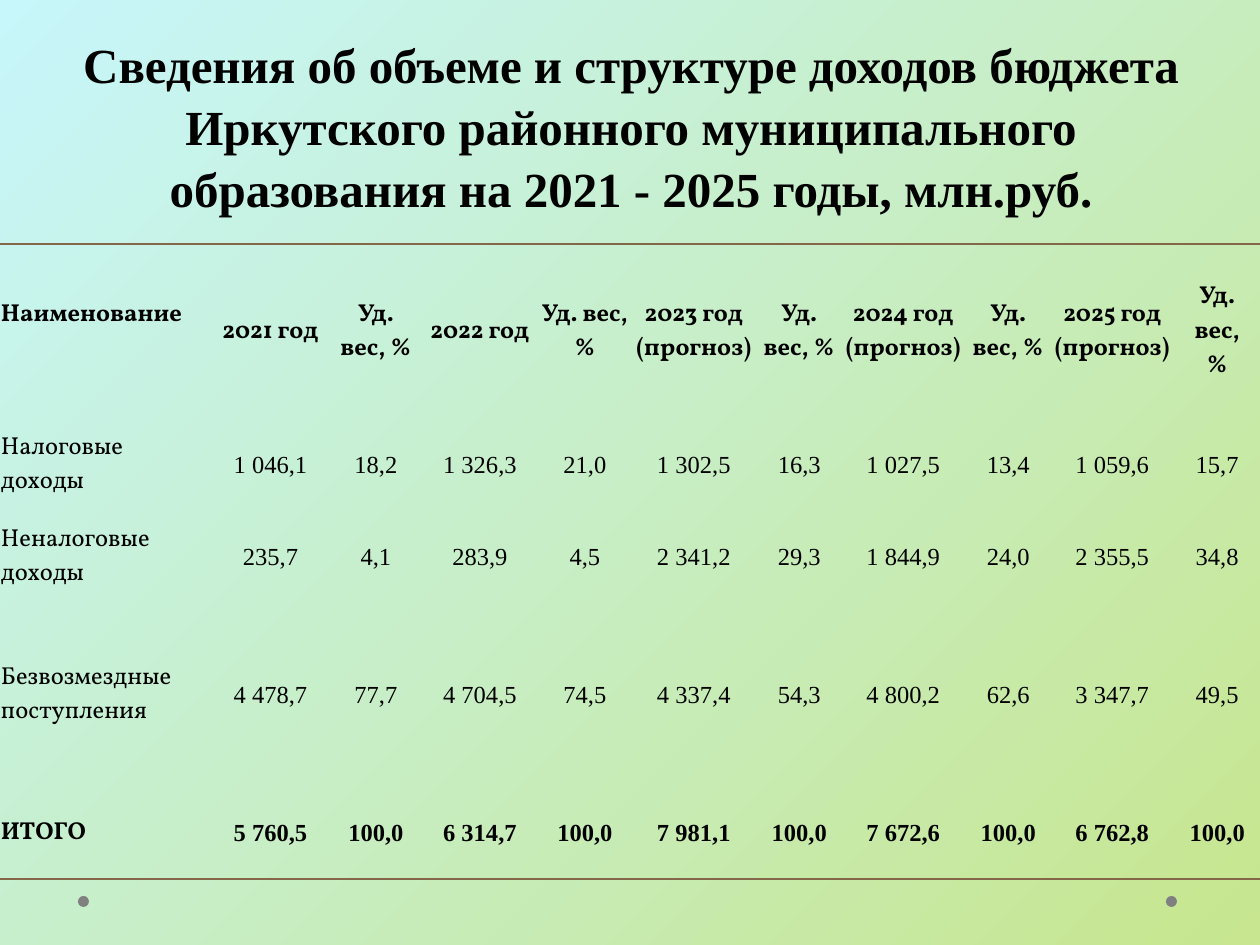
from lxml.etree import SubElement
from pptx import Presentation
from pptx.dml.color import RGBColor
from pptx.enum.shapes import MSO_SHAPE as Shape
from pptx.enum.text import MSO_ANCHOR as Anchor, PP_ALIGN as Align
from pptx.oxml import parse_xml
from pptx.oxml.ns import nsdecls, qn
from pptx.util import Pt

SCALE = 914400 / 126  # EMU in one px

THEME = {
    "sky": RGBColor.from_string("C7F6FB"),
    "lime": RGBColor.from_string("C7E68F"),
    "dot": RGBColor.from_string("808080"),
    "ink": RGBColor.from_string("000000"),
    "rule": "846648",
    "serif": "Times New Roman",
    "label": "Vollkorn",
    "title_size": Pt(28),
    "table_size": Pt(14),
}


def px(length):
    return round(length * SCALE)


def style_text(frame, align, name, size, bold):
    for para in frame.paragraphs:
        para.alignment = align
        for span in para.runs:
            span.font.color.rgb = THEME["ink"]
            for key, value in {"name": name, "size": size, "bold": bold}.items():
                setattr(span.font, key, value)


deck = Presentation()
deck.slide_width, deck.slide_height = px(1260), px(945)
page = deck.slides.add_slide(deck.slide_layouts[6])

# Background: diagonal gradient
backdrop = page.background.fill
backdrop.gradient()
backdrop.gradient_angle = 315
for stop, position, color in zip(backdrop.gradient_stops, (0, 1), ("sky", "lime")):
    stop.position = position
    stop.color.rgb = THEME[color]

# Footer dots
for left in (1166, 78):
    dot = page.shapes.add_shape(Shape.OVAL, px(left), px(896), px(11), px(11))
    dot.shadow.inherit = False
    dot.fill.solid()
    dot.fill.fore_color.rgb = THEME["dot"]
    dot.line.fill.background()

# Title
box = page.shapes.add_textbox(px(64), 0, px(1134), px(220))
title = box.text_frame
title.text = ("Сведения об объеме и структуре доходов бюджета Иркутского районного "
              "муниципального образования на 2021 - 2025 годы, млн.руб.")
title_format = {"word_wrap": True, "vertical_anchor": Anchor.BOTTOM,
                "margin_left": px(12), "margin_right": px(12), "margin_bottom": px(3)}
for key, value in title_format.items():
    setattr(title, key, value)
style_text(title, Align.CENTER, THEME["serif"], THEME["title_size"], True)
title.paragraphs[0].line_spacing = 1.05

# Income table
SHARE = "Уд. вес, %"
ROWS = [
    ["Наименование", "2021 год", SHARE, "2022 год", SHARE, "2023 год (прогноз)", SHARE,
     "2024 год (прогноз)", SHARE, "2025 год (прогноз)", "Уд.\nвес,\n%"],
    ["Налоговые доходы", "1 046,1", "18,2", "1 326,3", "21,0", "1 302,5", "16,3",
     "1 027,5", "13,4", "1 059,6", "15,7"],
    ["Неналоговые доходы", "235,7", "4,1", "283,9", "4,5", "2 341,2", "29,3",
     "1 844,9", "24,0", "2 355,5", "34,8"],
    ["Безвозмездные поступления", "4 478,7", "77,7", "4 704,5", "74,5", "4 337,4", "54,3",
     "4 800,2", "62,6", "3 347,7", "49,5"],
    ["ИТОГО", "5 760,5", "100,0", "6 314,7", "100,0", "7 981,1", "100,0",
     "7 672,6", "100,0", "6 762,8", "100,0"],
]
WIDTHS = [208, 125, 86, 122, 88, 130, 81, 127, 83, 125, 85]
HEIGHTS = [175, 92, 92, 184, 92]
LAST = len(ROWS) - 1
EDGES = {0: "a:lnT", LAST: "a:lnB"}

table = page.shapes.add_table(len(ROWS), len(WIDTHS), 0, px(244),
                              px(sum(WIDTHS)), px(sum(HEIGHTS))).table
table.first_row = table.horz_banding = False
# Table style without fills or grid
style_id = table._tbl.tblPr.find(qn("a:tableStyleId"))
style_id.text = "{2D5ABB26-0587-4C30-8999-92F81FD0307C}"
for column, width in zip(table.columns, WIDTHS):
    column.width = px(width)
for row, height in zip(table.rows, HEIGHTS):
    row.height = px(height)

cell_format = {"vertical_anchor": Anchor.MIDDLE, "margin_left": px(1),
               "margin_right": px(1), "margin_top": px(1), "margin_bottom": 0}
for r, values in enumerate(ROWS):
    for c, value in enumerate(values):
        cell = table.cell(r, c)
        cell.text = value
        for key, setting in cell_format.items():
            setattr(cell, key, setting)
        cell.fill.background()
        style_text(cell.text_frame, Align.LEFT if c == 0 else Align.CENTER,
                   THEME["label"] if r == 0 or c == 0 else THEME["serif"],
                   THEME["table_size"], r in EDGES)
        # Rule above the header and below the total
        if r in EDGES:
            edge = parse_xml(f'<{EDGES[r]} {nsdecls("a")} w="{Pt(1)}"/>')
            paint = SubElement(edge, qn("a:solidFill"))
            SubElement(paint, qn("a:srgbClr"), val=THEME["rule"])
            cell._tc.get_or_add_tcPr().insert(0, edge)

# The first heading sits one line higher than the others
table.cell(0, 0).margin_bottom = px(34)

deck.save("out.pptx")
